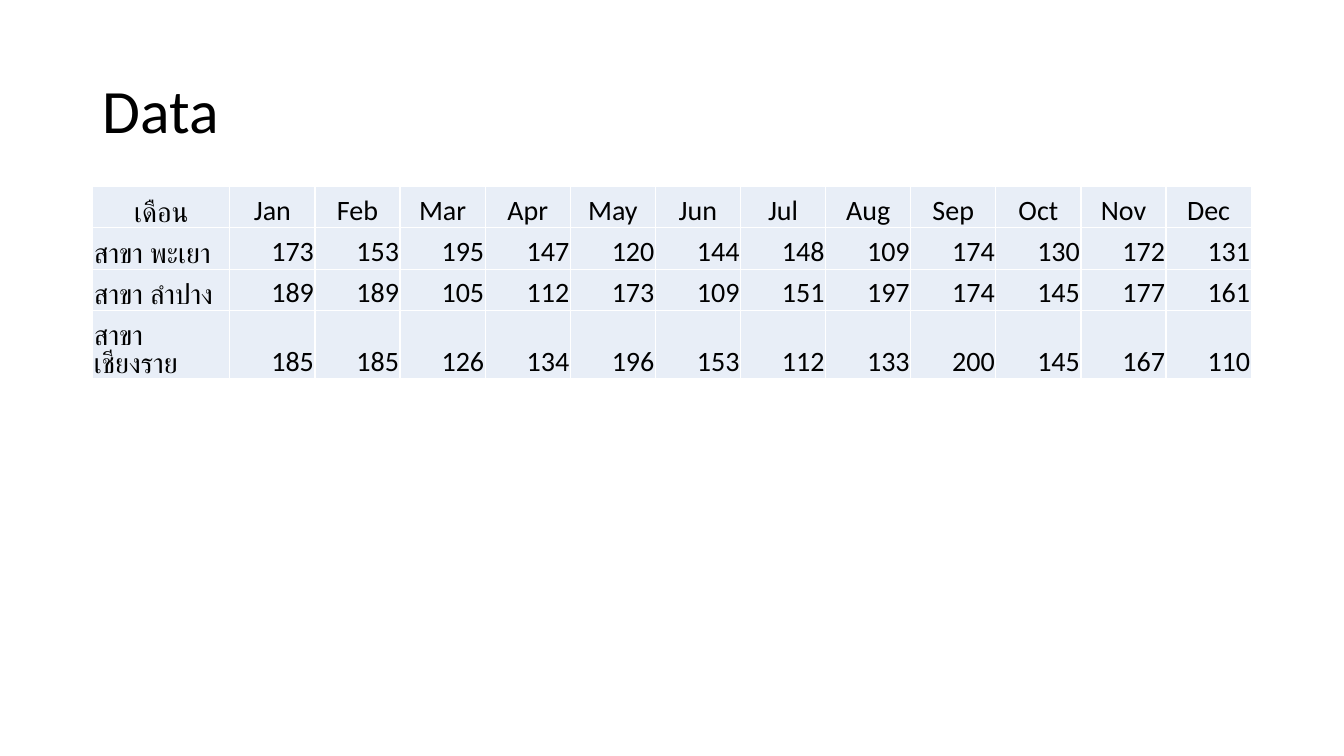
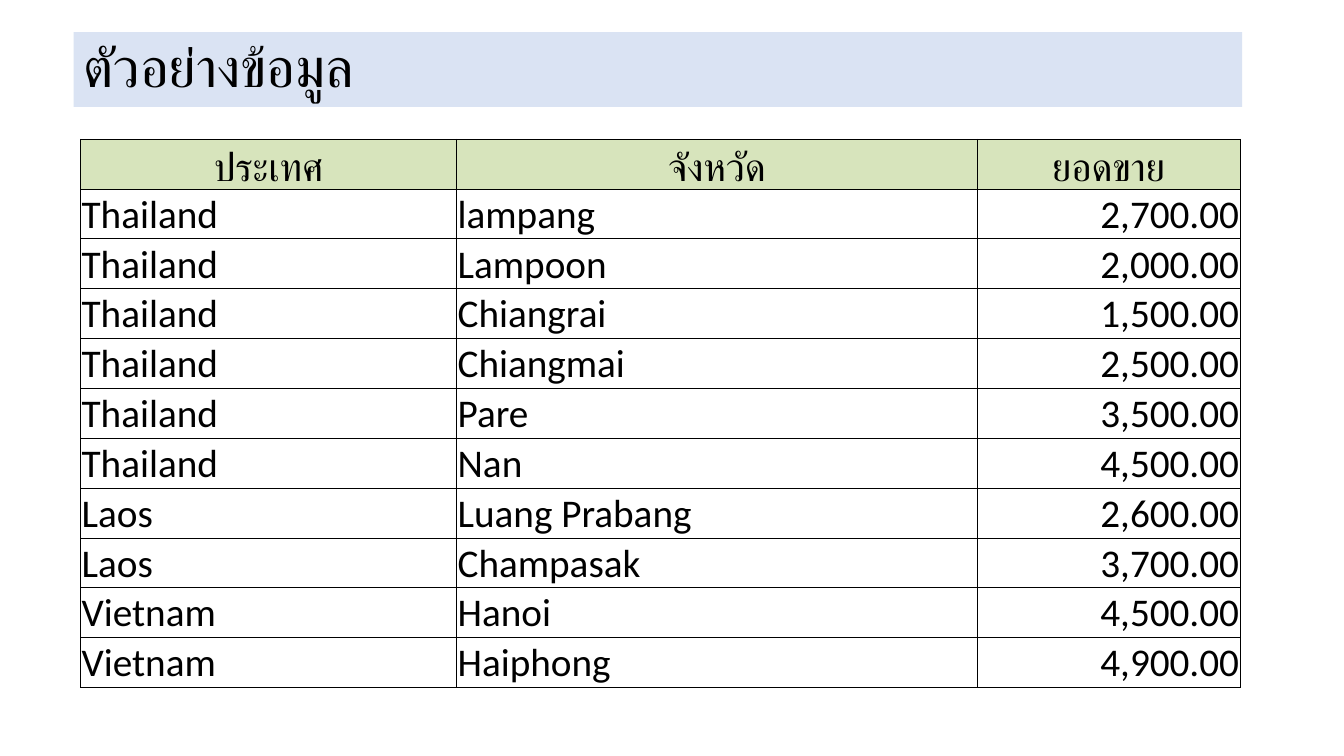
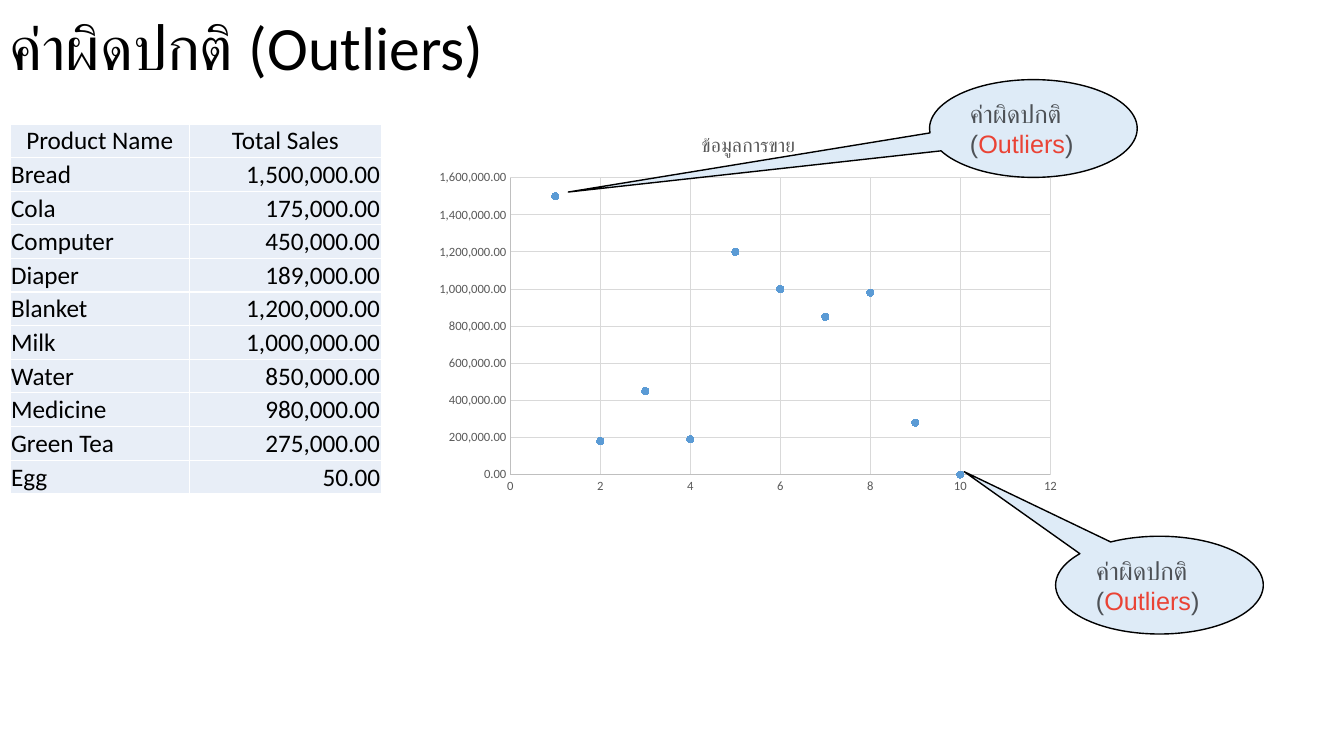
from lxml.etree import SubElement
from pptx import Presentation
from pptx.chart.data import XyChartData
from pptx.dml.color import RGBColor
from pptx.enum.chart import XL_CHART_TYPE, XL_MARKER_STYLE, XL_TICK_MARK
from pptx.enum.lang import MSO_LANGUAGE_ID
from pptx.enum.shapes import MSO_SHAPE
from pptx.enum.text import MSO_ANCHOR, PP_ALIGN
from pptx.oxml.ns import qn
from pptx.util import Inches, Pt

FONT = "Calibri"
BLACK = "000000"
WHITE = "FFFFFF"
PALE_BLUE = "E8EEF7"
TITLE_BAND = "DAE3F3"
HEADER_GREEN = "D7E4BC"
CALLOUT_FILL = "DEEBF7"
CALLOUT_TEXT = "4D5156"
HIGHLIGHT = "EA4335"
MARKER_BLUE = "5B9BD5"
AXIS_TEXT = "595959"
AXIS_LINE = "BFBFBF"
GRID_LINE = "D9D9D9"

MONTHS = "Jan Feb Mar Apr May Jun Jul Aug Sep Oct Nov Dec".split()
BRANCHES = [
    ("สาขา พะเยา", "173 153 195 147 120 144 148 109 174 130 172 131"),
    ("สาขา ลำปาง", "189 189 105 112 173 109 151 197 174 145 177 161"),
    ("สาขา เชียงราย", "185 185 126 134 196 153 112 133 200 145 167 110"),
]
PROVINCES = [
    ("Thailand", "lampang", "2,700.00"),
    ("Thailand", "Lampoon", "2,000.00"),
    ("Thailand", "Chiangrai", "1,500.00"),
    ("Thailand", "Chiangmai", "2,500.00"),
    ("Thailand", "Pare", "3,500.00"),
    ("Thailand", "Nan", "4,500.00"),
    ("Laos", "Luang Prabang", "2,600.00"),
    ("Laos", "Champasak", "3,700.00"),
    ("Vietnam", "Hanoi", "4,500.00"),
    ("Vietnam", "Haiphong", "4,900.00"),
]
PRODUCTS = [
    ("Bread", "1,500,000.00"),
    ("Cola", "175,000.00"),
    ("Computer", "450,000.00"),
    ("Diaper", "189,000.00"),
    ("Blanket", "1,200,000.00"),
    ("Milk", "1,000,000.00"),
    ("Water", "850,000.00"),
    ("Medicine", "980,000.00"),
    ("Green Tea", "275,000.00"),
    ("Egg", "50.00"),
]
PLOTTED_SALES = [1500000, 180000, 450000, 190000, 1200000,
                 1000000, 850000, 980000, 280000, 0]


def color(value):
    return RGBColor.from_string(value)


def set_font(font, size, value, name=FONT):
    font.name = name
    font.size = Pt(size)
    font.bold = False
    font.color.rgb = color(value)


def set_line(line, value, width):
    line.color.rgb = color(value)
    line.width = Pt(width)


def add_slide(presentation):
    return presentation.slides.add_slide(presentation.slide_layouts[6])


def add_title(slide, box, text, size=44, fill=None):
    shape = slide.shapes.add_textbox(*map(Inches, box))
    if fill:
        shape.fill.solid()
        shape.fill.fore_color.rgb = color(fill)
    frame = shape.text_frame
    frame.word_wrap = True
    frame.vertical_anchor = MSO_ANCHOR.MIDDLE
    paragraph = frame.paragraphs[0]
    paragraph.text = text
    paragraph.line_spacing = 0.9
    set_font(paragraph.font, size, BLACK)


def add_borders(cell, value, width):
    properties = cell._tc.get_or_add_tcPr()
    for side in ("a:lnL", "a:lnR", "a:lnT", "a:lnB"):
        line = SubElement(properties, qn(side), w=str(Pt(width)))
        fill = SubElement(line, qn("a:solidFill"))
        SubElement(fill, qn("a:srgbClr"), val=value)


def cell_alignment(text, is_header):
    if is_header:
        return PP_ALIGN.CENTER
    return PP_ALIGN.RIGHT if text[0].isdigit() else PP_ALIGN.LEFT


def add_data_table(slide, left, top, widths, height, rows, size,
                   border=(WHITE, 1), header_fill=PALE_BLUE,
                   body_fill=PALE_BLUE, anchor=MSO_ANCHOR.BOTTOM):
    box = (left, top, sum(widths), height)
    table = slide.shapes.add_table(
        len(rows), len(widths), *map(Inches, box)).table
    table.first_row = False
    table.horz_banding = False
    for column, width in zip(table.columns, widths):
        column.width = Inches(width)
    for row_index, row in enumerate(rows):
        table.rows[row_index].height = Inches(height / len(rows))
        fill = body_fill if row_index else header_fill
        for column_index, text in enumerate(row):
            cell = table.cell(row_index, column_index)
            cell.margin_left = cell.margin_right = Inches(0.01)
            cell.margin_top = Inches(0.01)
            cell.margin_bottom = 0
            cell.vertical_anchor = anchor
            add_borders(cell, *border)
            if fill:
                cell.fill.solid()
                cell.fill.fore_color.rgb = color(fill)
            else:
                cell.fill.background()
            paragraph = cell.text_frame.paragraphs[0]
            paragraph.text = text
            paragraph.alignment = cell_alignment(text, row_index == 0)
            set_font(paragraph.font, size, BLACK)
            if not text.isascii():
                paragraph.font.language_id = MSO_LANGUAGE_ID.THAI


def add_sales_chart(slide, box, title, values):
    data = XyChartData()
    points = data.add_series("Series 1")
    for position, value in enumerate(values, 1):
        points.add_data_point(position, value)
    chart = slide.shapes.add_chart(
        XL_CHART_TYPE.XY_SCATTER, *map(Inches, box), data).chart
    set_font(chart.font, 10, BLACK)
    chart.has_legend = False
    chart.has_title = True
    paragraph = chart.chart_title.text_frame.paragraphs[0]
    paragraph.text = title
    set_font(paragraph.font, 14, AXIS_TEXT)
    chart.plots[0].vary_by_categories = False
    series = chart.plots[0].series[0]
    series.smooth = False
    series.format.line.fill.background()
    series.marker.style = XL_MARKER_STYLE.CIRCLE
    series.marker.size = 5
    series.marker.format.fill.solid()
    series.marker.format.fill.fore_color.rgb = color(MARKER_BLUE)
    set_line(series.marker.format.line, MARKER_BLUE, 0.75)
    axes = ((chart.category_axis, "General"), (chart.value_axis, "#,##0.00"))
    for axis, number_format in axes:
        axis.has_major_gridlines = True
        set_line(axis.major_gridlines.format.line, GRID_LINE, 0.75)
        set_line(axis.format.line, AXIS_LINE, 0.75)
        axis.major_tick_mark = axis.minor_tick_mark = XL_TICK_MARK.NONE
        axis.tick_labels.number_format = number_format
        axis.tick_labels.number_format_is_linked = False
        set_font(axis.tick_labels.font, 9, AXIS_TEXT)


def add_outlier_callout(slide, left, top, pointer):
    shape = slide.shapes.add_shape(
        MSO_SHAPE.OVAL_CALLOUT, *map(Inches, (left, top, 2.06, 0.97)))
    shape.shadow.inherit = False
    for index, offset in enumerate(pointer):
        shape.adjustments[index] = offset
    shape.fill.solid()
    shape.fill.fore_color.rgb = color(CALLOUT_FILL)
    set_line(shape.line, BLACK, 1)
    frame = shape.text_frame
    frame.word_wrap = True
    frame.vertical_anchor = MSO_ANCHOR.MIDDLE
    paragraph = frame.paragraphs[0]
    paragraph.alignment = PP_ALIGN.LEFT
    parts = (("ค่าผิดปกติ (", CALLOUT_TEXT), ("Outliers", HIGHLIGHT),
             (")", CALLOUT_TEXT))
    for text, value in parts:
        run = paragraph.add_run()
        run.text = text
        set_font(run.font, 18, value, "Arial")


def build_branch_slide(presentation):
    slide = add_slide(presentation)
    add_title(slide, (0.92, 0.4, 11.5, 1.45), "Data")
    rows = [["เดือน", *MONTHS]]
    rows += [[name, *values.split()] for name, values in BRANCHES]
    name_width = 1.36
    month_width = (11.49 - name_width) / len(MONTHS)
    widths = [name_width] + [month_width] * len(MONTHS)
    add_data_table(slide, 0.92, 1.85, widths, 1.64, rows, 20)


def build_province_slide(presentation):
    slide = add_slide(presentation)
    add_title(slide, (0.73, 0.32, 11.59, 0.74), "ตัวอย่างข้อมูล", 39.6, TITLE_BAND)
    rows = [("ประเทศ", "จังหวัด", "ยอดขาย"), *PROVINCES]
    add_data_table(slide, 0.8, 1.38, (3.73, 5.16, 2.61), 5.44, rows, 28,
                   (BLACK, 0.5), HEADER_GREEN, None)


def build_outlier_slide(presentation):
    slide = add_slide(presentation)
    add_title(slide, (0, 0, 13.33, 1), "ค่าผิดปกติ (Outliers)")
    add_sales_chart(slide, (4.23, 1.17, 6.38, 3.8), "ข้อมูลการขาย", PLOTTED_SALES)
    rows = [("Product Name", "Total Sales"), *PRODUCTS]
    add_data_table(slide, 0.1, 1.23, (1.78, 1.9), 3.67, rows, 18,
                   anchor=MSO_ANCHOR.MIDDLE)
    add_outlier_callout(slide, 9.22, 0.79, (-2.24, 0.65))
    add_outlier_callout(slide, 10.47, 5.32, (-0.94, -1.16))


def main():
    presentation = Presentation()
    presentation.slide_width = Inches(13.33)
    presentation.slide_height = Inches(7.5)
    build_branch_slide(presentation)
    build_province_slide(presentation)
    build_outlier_slide(presentation)
    presentation.save("out.pptx")


if __name__ == "__main__":
    main()
